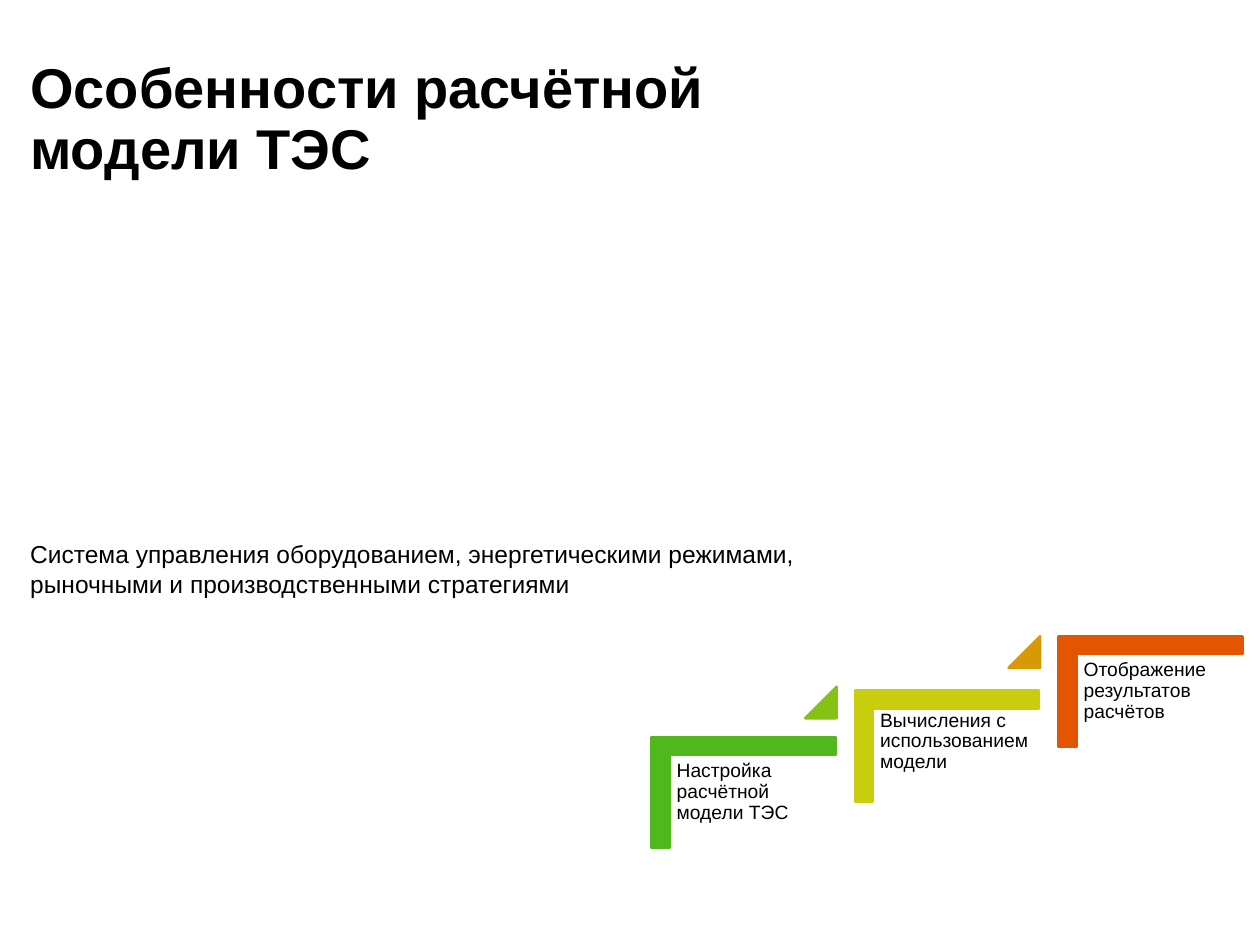
from typing import NamedTuple, Optional

from pptx import Presentation
from pptx.dml.color import RGBColor
from pptx.enum.shapes import MSO_SHAPE as Shape
from pptx.util import Inches, Pt

BLACK = RGBColor(0x00, 0x00, 0x00)
GREEN = RGBColor(0x4F, 0xB8, 0x1C)
LIME = RGBColor(0x86, 0xC2, 0x15)
YELLOW = RGBColor(0xC8, 0xCD, 0x0E)
AMBER = RGBColor(0xD8, 0x99, 0x07)
ORANGE = RGBColor(0xE3, 0x55, 0x00)

FONT = "Arial"
STEP_X, STEP_Y = 1.615, 0.4
LABEL_X, LABEL_Y = 5.32, 5.99


class Step(NamedTuple):
    label: str
    corner_top: float
    color: RGBColor
    marker: Optional[RGBColor]


STEPS = [
    Step("Настройка расчётной модели ТЭС", 5.56, GREEN, LIME),
    Step("Вычисления с использованием модели", 5.19, YELLOW, AMBER),
    Step("Отображение результатов расчётов", 4.76, ORANGE, None),
]


def add_text(s, text: str, x: float, y: float, w: float, h: float, size: int,
             bold: bool = False, spacing: float = 1.0, inset: float = 0) -> None:
    tf = s.shapes.add_textbox(Inches(x), Inches(y), Inches(w), Inches(h)).text_frame
    tf.word_wrap = True
    tf.margin_left = tf.margin_right = Inches(inset)
    tf.margin_top = tf.margin_bottom = Inches(inset)
    p = tf.paragraphs[0]
    p.line_spacing = spacing
    r = p.add_run()
    r.text = text
    r.font.name = FONT
    r.font.size = Pt(size)
    r.font.bold = bold
    r.font.color.rgb = BLACK


def add_solid(s, kind: Shape, x: float, y: float, w: float, h: float,
              color: RGBColor, adjustments: list[float], rotation: float = 0) -> None:
    sp = s.shapes.add_shape(kind, Inches(x), Inches(y), Inches(w), Inches(h))
    sp.shadow.inherit = False
    sp.rotation = rotation
    for i, value in enumerate(adjustments):
        sp.adjustments[i] = value
    sp.fill.solid()
    sp.fill.fore_color.rgb = color
    sp.line.color.rgb = color
    sp.line.width = Pt(1.5)


def add_step(s, index: int, step: Step) -> None:
    x = LABEL_X + index * STEP_X
    y = LABEL_Y - index * STEP_Y
    add_solid(s, Shape.CORNER, x + 0.14, step.corner_top, 0.88, 1.46,
              step.color, [0.161, 0.161], rotation=90)
    add_text(s, step.label, x, y, 1.32, 1.16, 11, spacing=0.9, inset=0.05)
    if step.marker is not None:
        add_solid(s, Shape.ISOSCELES_TRIANGLE, x + 1.07, y - 0.54, 0.25, 0.25,
                  step.marker, [1])


def main() -> None:
    prs = Presentation()
    prs.slide_width, prs.slide_height = Inches(10), Inches(7.5)
    s = prs.slides.add_slide(prs.slide_layouts[6])

    # Subtitle and title
    add_text(s, "Система управления оборудованием, энергетическими режимами, "
                "рыночными и производственными стратегиями",
             0.24, 4.28, 6.26, 0.47, 14)
    add_text(s, "Особенности расчётной модели ТЭС",
             0.24, 0.48, 6.91, 6.36, 32, bold=True, spacing=0.9)

    # Rising staircase of steps
    for index, step in enumerate(STEPS):
        add_step(s, index, step)

    prs.save("out.pptx")


if __name__ == "__main__":
    main()
